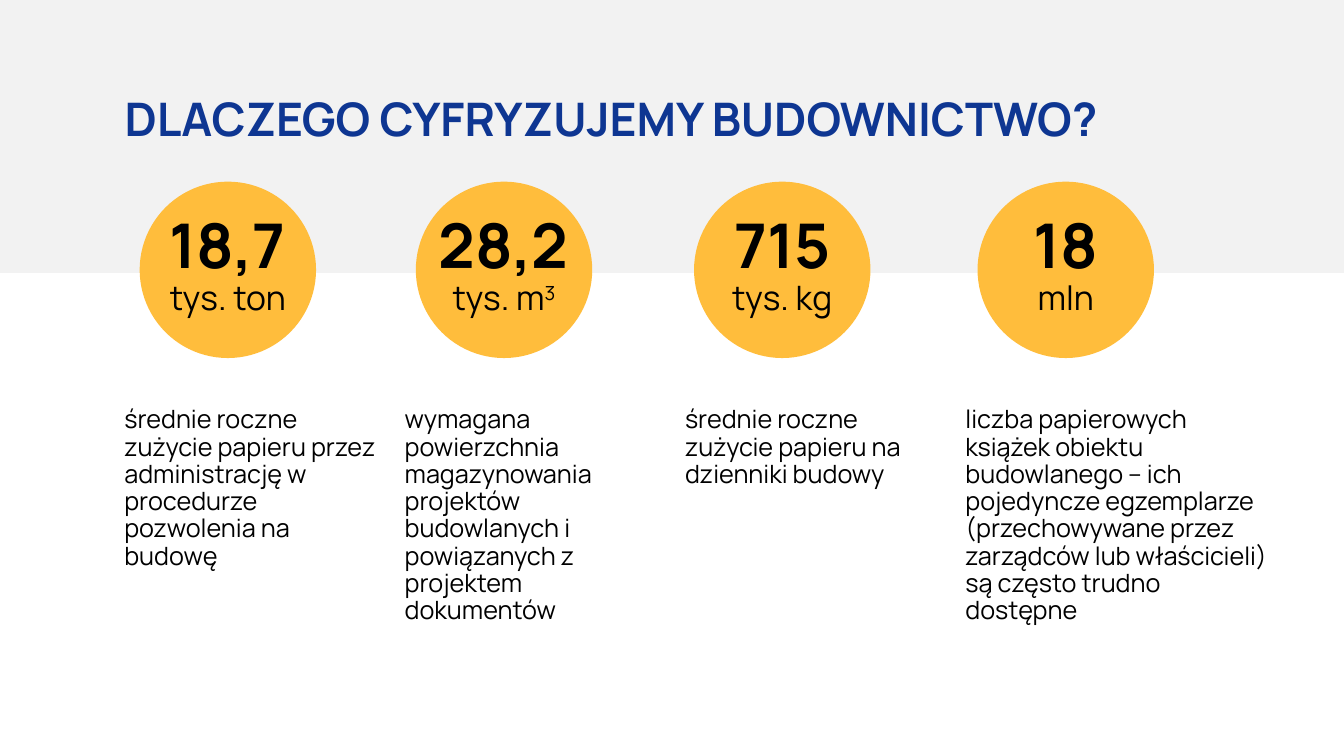
from pptx import Presentation
from pptx.dml.color import RGBColor
from pptx.enum.shapes import MSO_SHAPE
from pptx.enum.text import MSO_ANCHOR, PP_ALIGN
from pptx.util import Pt

PX = 9525
RECT, OVAL = MSO_SHAPE.RECTANGLE, MSO_SHAPE.OVAL
TOP = MSO_ANCHOR.TOP
LEFT, MID = PP_ALIGN.LEFT, PP_ALIGN.CENTER
FONT = "Manrope"
BLACK, BLUE, GOLD, GREY = "000000", "0E3692", "FFBD3C", "F2F2F2"

FACTS = [
    (133, 262, "18,7", "tys. ton", "",
     "średnie roczne zużycie papieru przez administrację w procedurze "
     "pozwolenia na budowę"),
    (396, 262, "28,2", "tys. m", "3",
     "wymagana powierzchnia magazynowania projektów budowlanych i "
     "powiązanych z projektem dokumentów"),
    (661, 262, "715", "tys. kg", "",
     "średnie roczne zużycie papieru na dzienniki budowy"),
    (931, 312, "18", "mln", "",
     "liczba papierowych książek obiektu budowlanego – ich pojedyncze "
     "egzemplarze (przechowywane przez zarządców lub właścicieli) "
     "są często trudno dostępne"),
]


def paint(hue):
    return RGBColor.from_string(hue)


def place(shape, box):
    shape.left, shape.top, shape.width, shape.height = [n * PX for n in box]


def block(slide, kind, box, hue):
    shape = slide.shapes.add_shape(kind, *[n * PX for n in box])
    shape.shadow.inherit = False
    shape.fill.solid()
    shape.fill.fore_color.rgb = paint(hue)
    shape.line.fill.background()


def write(para, text, size=18, hue=BLACK, bold=False, align=LEFT, base=0):
    para.alignment = align
    para.line_spacing = 0.9
    para.space_before = Pt(0)
    run = para.add_run()
    run.text = text
    font = run.font
    font.name, font.size, font.bold = FONT, Pt(size), bold
    font.color.rgb = paint(hue)
    if base:
        font._element.set("baseline", str(base * 1000))


def frame(slide, box):
    area = slide.shapes.add_textbox(*[n * PX for n in box]).text_frame
    area.word_wrap = True
    return area


def heading(slide, box):
    title = slide.shapes.title
    place(title, box)
    area = title.text_frame
    area.vertical_anchor = TOP
    write(area.paragraphs[0], "DLACZEGO CYFRYZUJEMY BUDOWNICTWO?",
          size=33, hue=BLUE, bold=True)


def badge(slide, box, count, unit, power):
    left, top, wide, high = box
    block(slide, OVAL, box, GOLD)
    area = frame(slide, (left + 6, top + 27, wide - 12, high - 48))
    write(area.paragraphs[0], count, size=44, bold=True, align=MID)
    para = area.add_paragraph()
    write(para, unit, size=24, align=MID)
    if power:
        write(para, power, size=24, align=MID, base=30)


def note(slide, box, text):
    write(frame(slide, box).paragraphs[0], text)


def main():
    deck = Presentation()
    deck.slide_width, deck.slide_height = 1280 * PX, 720 * PX
    slide = deck.slides.add_slide(deck.slide_layouts[5])
    block(slide, RECT, (0, 0, 1280, 260), GREY)
    for col, (left, wide, count, unit, power, text) in enumerate(FACTS):
        badge(slide, (left, 173, 168, 168), count, unit, power)
        note(slide, (109 + 267 * col, 383, wide, 242), text)
    heading(slide, (109, 87, 1092, 63))
    tree = slide.shapes._spTree
    tree.append(slide.shapes.title._element)
    deck.save("out.pptx")


if __name__ == "__main__":
    main()
